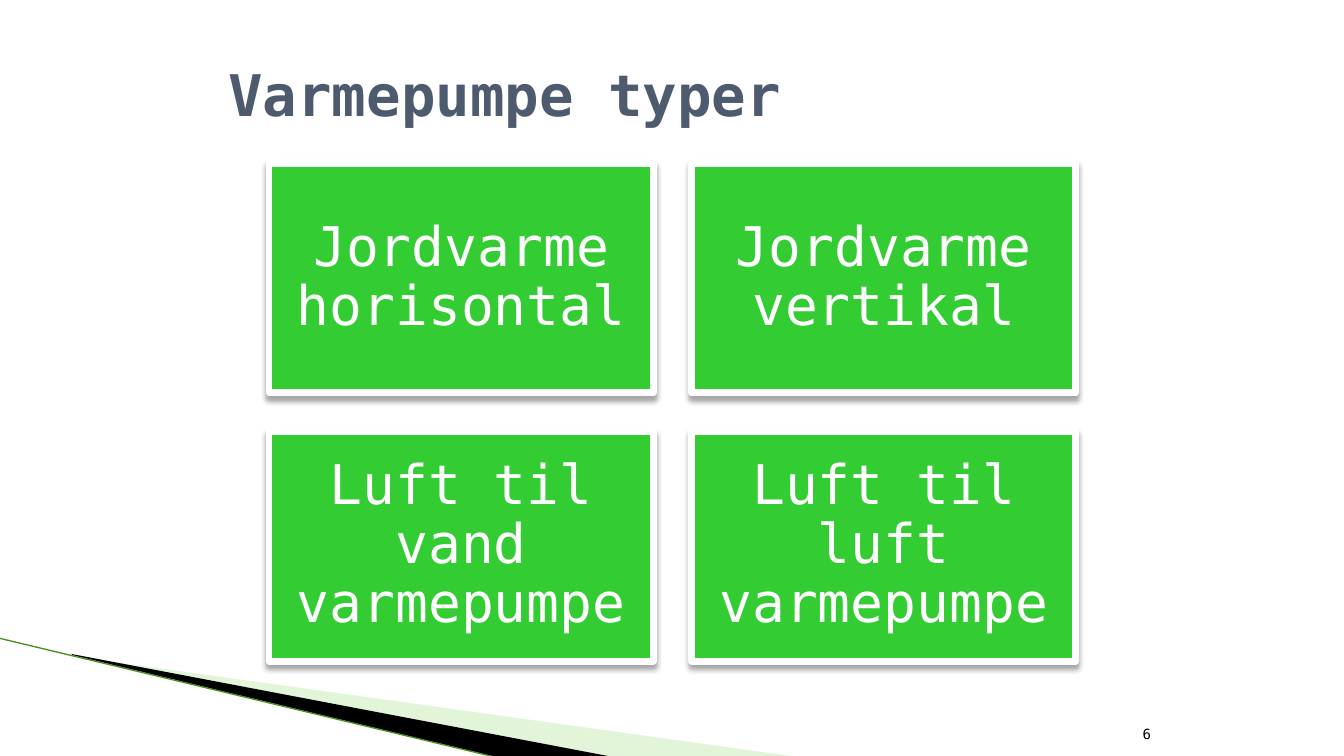
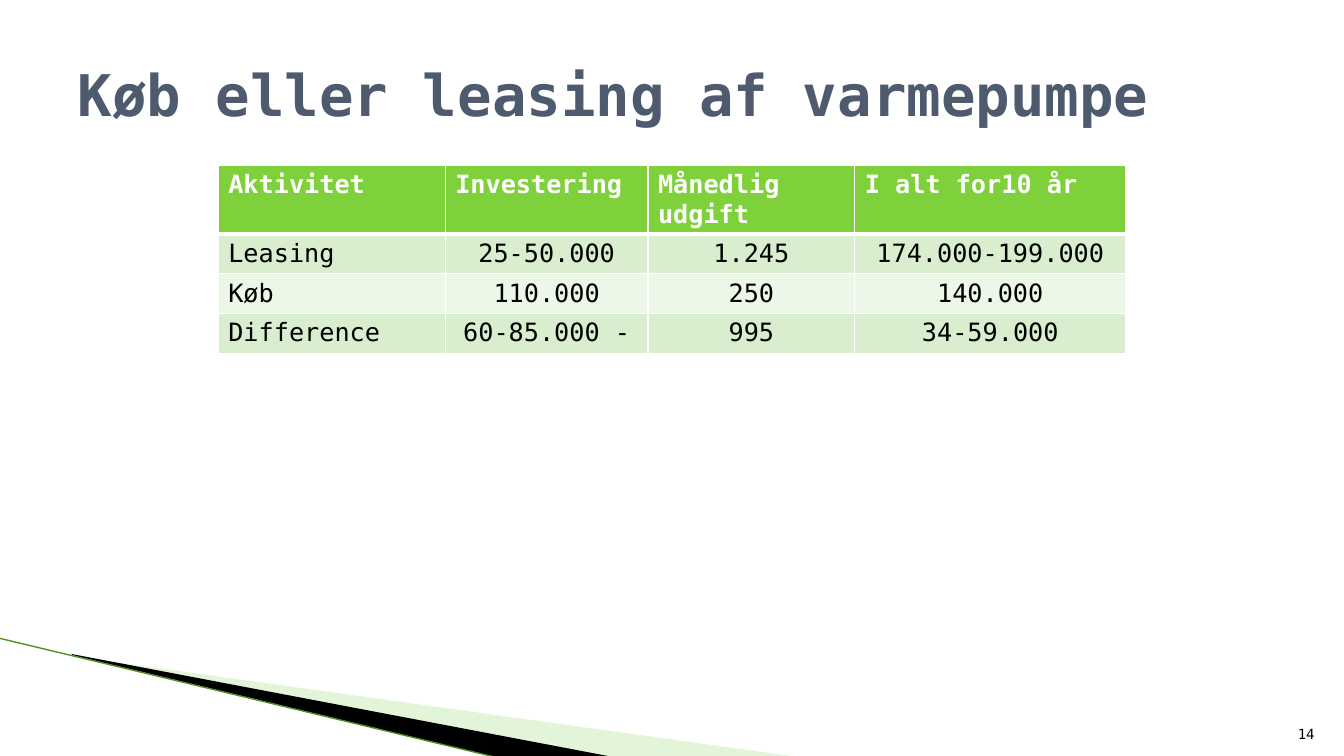
"""Build two slides about heat pump types and leasing."""
from pptx import Presentation
from pptx.dml.color import RGBColor
from pptx.enum.shapes import MSO_CONNECTOR as CONN, MSO_SHAPE as SHAPE
from pptx.enum.text import MSO_ANCHOR as ANCHOR, PP_ALIGN as ALIGN
from pptx.oxml import parse_xml
from pptx.oxml.ns import nsdecls, qn
from pptx.util import Cm, Pt

FONT = "DejaVu Sans Mono"
WHITE, BLACK, SLATE = "FFFFFF", "000000", "4E5B6F"
CARD_GREEN, HEAD_GREEN, PALE_GREEN, EDGE_GREEN = "33CC33", "7FD13B", "B8E7A1", "4E8F1F"
BANDS = ("D8EECE", "ECF7E8")

CARDS = ["Jordvarme horisontal", "Jordvarme vertikal",
         "Luft til vand varmepumpe", "Luft til luft varmepumpe"]
COSTS = [
    ["Aktivitet", "Investering", "Månedlig udgift", "I alt for10 år"],
    ["Leasing", "25-50.000", "1.245", "174.000-199.000"],
    ["Køb", "110.000", "250", "140.000"],
    ["Difference", "60-85.000 -", "995", "34-59.000"],
]


def rgb(value):
    """Return the colour for a hex string."""
    return RGBColor.from_string(value)


def paint(target, color):
    """Give a shape or cell a solid fill."""
    target.fill.solid()
    target.fill.fore_color.rgb = rgb(color)


def write(tf, text, size, color=BLACK, bold=False, align=ALIGN.LEFT,
          anchor=ANCHOR.MIDDLE, spacing=None):
    """Put one formatted paragraph in a text frame."""
    tf.word_wrap = True
    tf.vertical_anchor = anchor
    p = tf.paragraphs[0]
    p.alignment = align
    p.line_spacing = spacing
    r = p.add_run()
    r.text = text
    font = r.font
    font.name, font.size, font.bold = FONT, Pt(size), bold
    font.color.rgb = rgb(color)


def add_wedge(slide, points, color, alpha=100):
    """Draw a closed outline with a plain fill."""
    start, *rest = [(Cm(x), Cm(y)) for x, y in points]
    builder = slide.shapes.build_freeform(*start, scale=1.0)
    builder.add_line_segments(rest, close=True)
    sp = builder.convert_to_shape()
    sp.shadow.inherit = False
    paint(sp, color)
    sp.line.fill.background()
    if alpha < 100:
        clr = sp.element.spPr.find(qn("a:solidFill"))[0]
        clr.append(parse_xml(f'<a:alpha {nsdecls("a")} val="{alpha * 1000}"/>'))
    return sp


def add_edge(slide, start, end, color, width):
    """Draw a straight line without shadow."""
    line = slide.shapes.add_connector(CONN.STRAIGHT, *map(Cm, start + end))
    line.line.color.rgb = rgb(color)
    line.line.width = Pt(width)
    line.element.spPr.append(parse_xml(f'<a:effectLst {nsdecls("a")}/>'))
    return line


def decorate(layout, slide):
    """Draw the corner wedges and move them to the shared layout."""
    parts = [
        add_wedge(slide, [(1.85, 16.54), (20.14, 19.08), (15.44, 19.08), (1.85, 16.51)],
                  PALE_GREEN, alpha=40),
        add_wedge(slide, [(1.8, 16.48), (15.47, 19.08), (12.6, 19.1), (1.83, 16.51)], BLACK),
        add_edge(slide, (-0.03, 16.08), (12.57, 19.1), EDGE_GREEN, 0.95),
    ]
    for number, part in enumerate(parts, 20):
        part.element.xpath(".//p:cNvPr")[0].set("id", str(number))
        layout.shapes.element.append(part.element)


def set_title(slide, text, left, width):
    """Place and format the slide title."""
    title = slide.shapes.title
    title.left, title.top, title.width, title.height = map(Cm, (left, 0.76, width, 3.18))
    write(title.text_frame, text, 41, SLATE, bold=True)


def add_page_number(slide, text, left, width):
    """Add the page number at the foot."""
    box = slide.shapes.add_textbox(Cm(left), Cm(17.8), Cm(width), Cm(1.02))
    write(box.text_frame, text, 10, align=ALIGN.RIGHT, anchor=ANCHOR.BOTTOM)


def add_card(slide, text, left, top, width, height):
    """Add a green card with a white frame and a soft shadow."""
    sp = slide.shapes.add_shape(SHAPE.RECTANGLE, *map(Cm, (left, top, width, height)))
    paint(sp, CARD_GREEN)
    sp.line.color.rgb = rgb(WHITE)
    sp.line.width = Pt(5)
    sp.line._get_or_add_ln().append(parse_xml(f'<a:round {nsdecls("a")}/>'))
    sp.shadow.inherit = False
    sp.element.spPr.find(qn("a:effectLst")).append(parse_xml(
        f'<a:outerShdw {nsdecls("a")} blurRad="{Pt(4)}" dist="{Pt(3)}" dir="5400000" '
        f'rotWithShape="0"><a:srgbClr val="{BLACK}"><a:alpha val="35000"/></a:srgbClr>'
        '</a:outerShdw>'))
    tf = sp.text_frame
    tf.margin_left = tf.margin_top = tf.margin_right = tf.margin_bottom = Cm(0.41)
    write(tf, text, 39, WHITE, align=ALIGN.CENTER, spacing=0.9)


def add_borders(cell, top=1, bottom=1):
    """Give a cell white borders of the stated widths."""
    for side, width in (("L", 1), ("R", 1), ("T", top), ("B", bottom)):
        cell._tc.get_or_add_tcPr().append(parse_xml(
            f'<a:ln{side} {nsdecls("a")} w="{Pt(width)}"><a:solidFill>'
            f'<a:srgbClr val="{WHITE}"/></a:solidFill></a:ln{side}>'))


def add_cost_table(slide, rows, left, top, widths, heights):
    """Add the banded cost table."""
    frame = slide.shapes.add_table(len(rows), len(widths), Cm(left), Cm(top),
                                   Cm(sum(widths)), Cm(sum(heights)))
    table = frame.table
    for column, width in zip(table.columns, widths):
        column.width = Cm(width)
    for i, texts in enumerate(rows):
        table.rows[i].height = Cm(heights[i])
        head = i == 0
        for j, text in enumerate(texts):
            cell = table.cell(i, j)
            add_borders(cell, top=3 if i == 1 else 1, bottom=3 if head else 1)
            paint(cell, HEAD_GREEN if head else BANDS[(i - 1) % 2])
            write(cell.text_frame, text, 18, WHITE if head else BLACK, bold=head,
                  align=ALIGN.LEFT if head or j == 0 else ALIGN.CENTER, anchor=ANCHOR.TOP)


def build_types(slide):
    """Fill the slide with the four heat pump types."""
    set_title(slide, "Varmepumpe typer", 5.5, 22.86)
    add_page_number(slide, "6", 28.24, 1.02)
    width, height, gap = 9.68, 5.79, 0.97
    for i, text in enumerate(CARDS):
        row, col = divmod(i, 2)
        add_card(slide, text, 6.78 + col * (width + gap), 4.11 + row * (height + gap),
                 width, height)


def build_costs(slide):
    """Fill the slide that compares buying and leasing."""
    add_cost_table(slide, COSTS, 5.5, 4.17, [5.72, 5.11, 5.21, 6.83], [1.7, 1, 1, 1])
    set_title(slide, "Køb eller leasing af varmepumpe", 1.7, 30.48)
    add_page_number(slide, "14", 32.03, 1.35)


def main():
    """Build and save the presentation."""
    prs = Presentation()
    prs.slide_width, prs.slide_height = Cm(33.87), Cm(19.05)
    layout = prs.slide_layouts[5]
    types, costs = (prs.slides.add_slide(layout) for _ in range(2))
    decorate(layout, types)
    build_types(types)
    build_costs(costs)
    prs.save("out.pptx")


if __name__ == "__main__":
    main()
